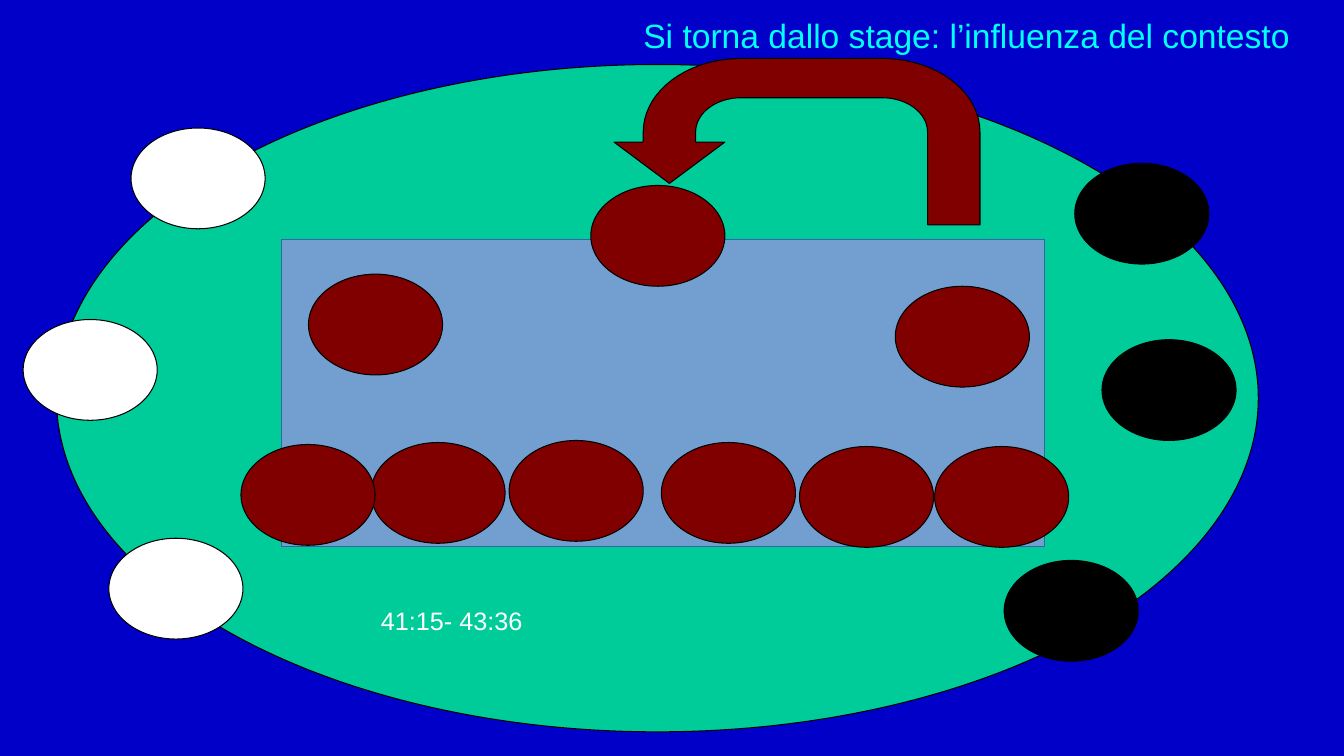
from math import cos, radians, sin

from pptx import Presentation
from pptx.dml.color import RGBColor
from pptx.enum import shapes, text
from pptx.util import Inches, Pt

NAVY, GREEN, BLUE, BLUE_EDGE = "0000C8", "00CC99", "729FCF", "3465A4"
MAROON, BLACK, WHITE, CYAN = "800000", "000000", "FFFFFF", "00FFFF"
OVAL, RECTANGLE = shapes.MSO_SHAPE.OVAL, shapes.MSO_SHAPE.RECTANGLE


def paint(fmt, color):
    fmt.solid()
    fmt.fore_color.rgb = RGBColor.from_string(color)


def style(shape, fill, edge=BLACK):
    shape.shadow.inherit = False
    paint(shape.fill, fill)
    paint(shape.line.fill, edge)
    shape.line.width = Pt(0.75)


prs = Presentation()
prs.slide_width, prs.slide_height = Inches(13.33), Inches(7.5)
slide = prs.slides.add_slide(prs.slide_layouts[6])
paint(slide.background.fill, NAVY)

# Room and table
room = slide.shapes.add_shape(OVAL, Inches(0.56), Inches(0.64), Inches(11.92), Inches(6.62))
style(room, GREEN)
table = slide.shapes.add_shape(RECTANGLE, Inches(2.79), Inches(2.38), Inches(7.57), Inches(3.04))
style(table, BLUE, BLUE_EDGE)

# U-turn arrow: its bends are quarter ellipses around two centres
left_bend, right_bend, bend_y = 7.35, 8.75, 1.31
outer, inner = (0.97, 0.73), (0.45, 0.34)
bends = []
for center_x, (rx, ry), start, turn in [
    (right_bend, outer, 0, 1),
    (left_bend, outer, 90, 1),
    (left_bend, inner, 180, -1),
    (right_bend, inner, 90, -1),
]:
    angles = [radians(start + turn * step) for step in range(0, 91, 5)]
    bends.append([(center_x + rx * cos(a), bend_y - ry * sin(a)) for a in angles])
arrowhead = [(6.38, 1.41), (6.09, 1.41), (6.64, 1.82), (7.19, 1.41), (6.9, 1.41)]
outline = [(9.72, 2.23), *bends[0], *bends[1], *arrowhead, *bends[2], *bends[3], (9.2, 2.23)]
points = [(Inches(x), Inches(y)) for x, y in outline]

# People: seated at the table, then around the room
seated = [(3.68, 4.39), (2.39, 4.41), (3.06, 2.72), (8.88, 2.84), (5.05, 4.37),
          (7.93, 4.43), (9.27, 4.43), (6.56, 4.39)]
returning = [(5.86, 1.84)]
right_side = [(10.66, 1.62), (10.93, 3.37), (9.96, 5.56)]
left_side = [(1.3, 1.27), (1.08, 5.34), (0.23, 3.17)]
for people, color in [(seated, MAROON), (returning, MAROON), (right_side, BLACK), (left_side, WHITE)]:
    if people is returning:
        builder = slide.shapes.build_freeform(*points[0], scale=1.0)
        builder.add_line_segments(points[1:], close=True)
        style(builder.convert_to_shape(), MAROON)
    for x, y in people:
        person = slide.shapes.add_shape(OVAL, Inches(x), Inches(y), Inches(1.33), Inches(1))
        style(person, color)

# Title and time span
for words, box, size, color, align, anchor in [
    ("Si torna dallo stage: l’influenza del contesto", (1.77, 0, 11.12, 0.7), 24, CYAN,
     text.PP_ALIGN.RIGHT, text.MSO_ANCHOR.MIDDLE),
    ("41:15- 43:36", (3.68, 5.96, 5.77, 0.4), 18, WHITE,
     text.PP_ALIGN.LEFT, text.MSO_ANCHOR.TOP),
]:
    frame = slide.shapes.add_textbox(*map(Inches, box)).text_frame
    frame.word_wrap = True
    frame.vertical_anchor = anchor
    line = frame.paragraphs[0]
    line.alignment = align
    run = line.add_run()
    run.text = words
    for name, value in {"name": "Arial", "size": Pt(size)}.items():
        setattr(run.font, name, value)
    paint(run.font.fill, color)

prs.save("out.pptx")
